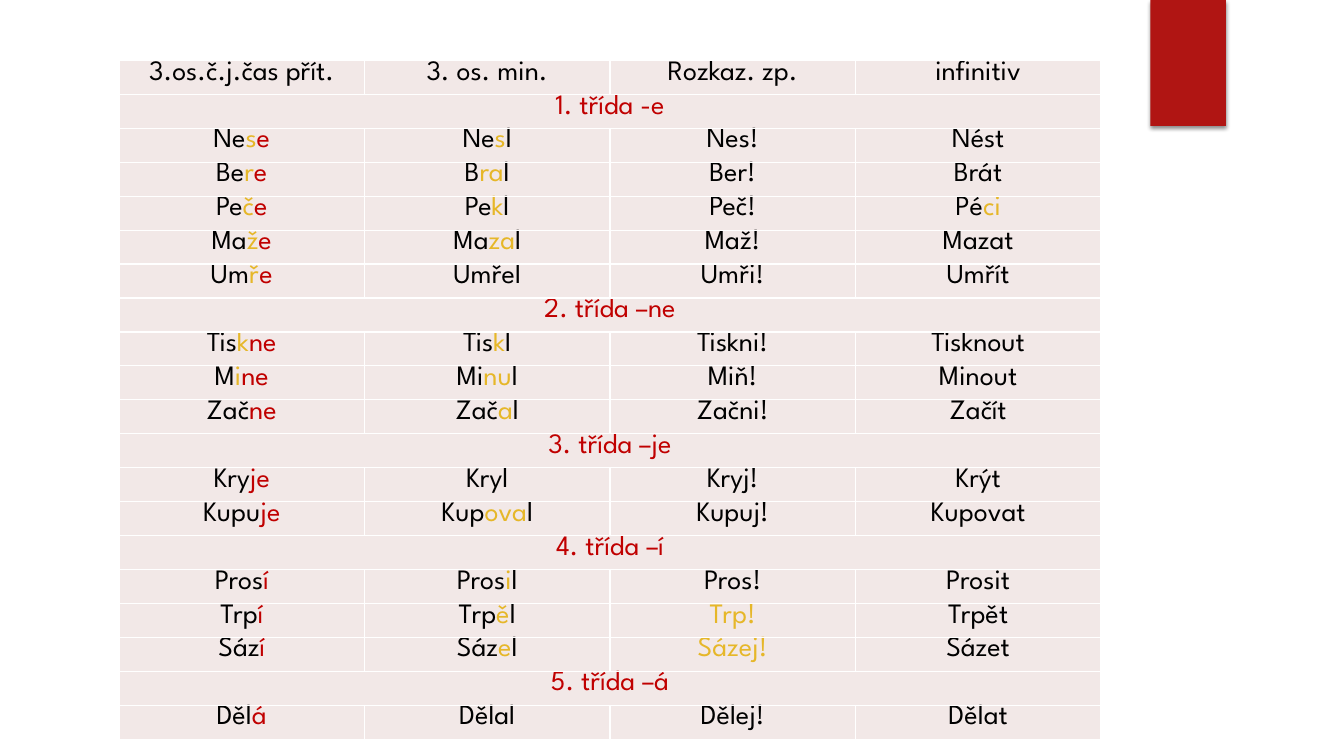
"""Builds a slide with a table of Czech verb classes and their stems."""
from dataclasses import dataclass

from lxml.etree import SubElement
from pptx import Presentation
from pptx.dml.color import RGBColor as Color
from pptx.enum.shapes import MSO_SHAPE as Shape
from pptx.enum.text import PP_ALIGN as Align
from pptx.oxml import parse_xml
from pptx.oxml.ns import nsdecls, qn
from pptx.util import Inches, Pt


@dataclass(frozen=True)
class Theme:
    font: str = "League Spartan"
    size: int = 20
    text: str = "000000"
    ending: str = "C00000"
    stem: str = "E6B729"
    cell: str = "F2E8E7"
    border: str = "FFFFFF"
    ribbon: str = "B01513"


theme = Theme()
MARKS = {"^": theme.ending, "~": theme.stem}
VERBS = [
    ["3.os.č.j.čas přít.", "3. os. min.", "Rozkaz. zp.", "infinitiv"],
    ["^1. třída -e"],
    ["Ne/~s/^e", "Ne/~s/l", "Nes!", "Nést"],
    ["Be/~r/^e", "B/~ra/l", "Ber!", "Brát"],
    ["Pe/~č/^e", "Pe/~k/l", "Peč!", "Pé/~ci"],
    ["Ma/~ž/^e", "Ma/~za/l", "Maž!", "Mazat"],
    ["Um/~ř/^e", "Umřel", "Umři!", "Umřít"],
    ["^2. třída –ne"],
    ["Tis/~k/^ne", "Tis/~k/l", "Tiskni!", "Tisknout"],
    ["M/~i/^ne", "Mi/~nu/l", "Miň!", "Minout"],
    ["Zač/^ne", "Zač/~a/l", "Začni!", "Začít"],
    ["^3. třída –je"],
    ["Kry/^je", "Kryl", "Kryj!", "Krýt"],
    ["Kupu/^je", "Kup/~ova/l", "Kupuj!", "Kupovat"],
    ["^4. třída –í"],
    ["Pros/^í", "Pros/~i/l", "Pros!", "Prosit"],
    ["Trp/^í", "Trp/~ě/l", "~Trp!", "Trpět"],
    ["Sáz/^í", "Sáz/~e/l", "~Sázej!", "Sázet"],
    ["^5. třída –á"],
    ["Děl/^á", "Dělal", "Dělej!", "Dělat"],
]


def style_cell(cell):
    cell.margin_left = cell.margin_right = Inches(0.05)
    cell.margin_top = cell.margin_bottom = 0
    cell.fill.solid()
    cell.fill.fore_color.rgb = Color.from_string(theme.cell)
    properties = cell._tc.get_or_add_tcPr()
    for position, side in enumerate(("lnL", "lnR", "lnT", "lnB")):
        properties.insert(position, parse_xml(
            f'<a:{side} {nsdecls("a")} w="{Pt(1)}"><a:solidFill>'
            f'<a:srgbClr val="{theme.border}"/></a:solidFill></a:{side}>'))


def write_cell(cell, marked_text):
    para = cell.text_frame.paragraphs[0]
    para.alignment = Align.CENTER
    for part in marked_text.split("/"):
        span = para.add_run()
        span.text = part.lstrip("^~")
        span.font.name = theme.font
        span.font.size = Pt(theme.size)
        span.font.color.rgb = Color.from_string(MARKS.get(part[0], theme.text))


deck = Presentation()
deck.slide_width, deck.slide_height = Inches(13.33), Inches(7.5)
page = deck.slides.add_slide(deck.slide_layouts[6])

ribbon = page.shapes.add_shape(
    Shape.RECTANGLE, Inches(11.41), 0, Inches(0.75), Inches(1.25))
ribbon.fill.solid()
ribbon.fill.fore_color.rgb = Color.from_string(theme.ribbon)
ribbon.line.fill.background()
ribbon.shadow.inherit = False
effects = ribbon._element.spPr.find(qn("a:effectLst"))
shadow = SubElement(effects, qn("a:outerShdw"), blurRad=str(Pt(3)),
                    dist=str(Pt(2)), dir="5400000", rotWithShape="0")
shade = SubElement(shadow, qn("a:srgbClr"), val=theme.text)
SubElement(shade, qn("a:alpha"), val="45000")

columns = len(VERBS[0])
frame = page.shapes.add_table(len(VERBS), columns, Inches(1.18), Inches(0.6),
                              Inches(9.74), Inches(6.74))
table = frame.table
table.first_row = table.horz_banding = False
for cell in table.iter_cells():
    style_cell(cell)
for row, forms in enumerate(VERBS):
    if len(forms) == 1:
        table.cell(row, 0).merge(table.cell(row, columns - 1))
    for column, form in enumerate(forms):
        write_cell(table.cell(row, column), form)

deck.save("out.pptx")
